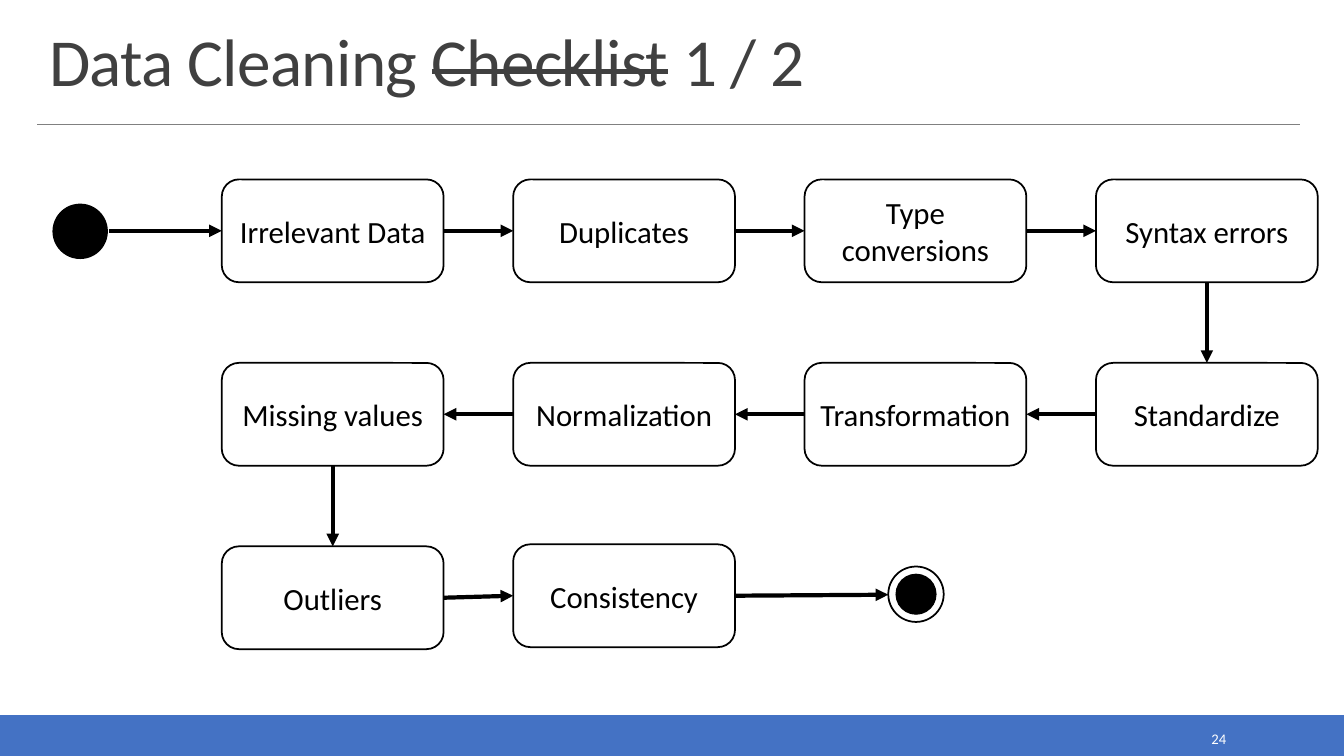
from lxml import etree
from pptx import Presentation
from pptx import util as u
from pptx.dml.color import RGBColor
from pptx.enum import shapes, text
from pptx.oxml.ns import qn

COLORS = {"bar": "4472C4", "rule": "808080", "title": "404040",
          "ink": "000000", "paper": "FFFFFF"}
SHAPE = shapes.MSO_SHAPE
MIDDLE = text.MSO_ANCHOR.MIDDLE
BOX_W, BOX_H = 2.2, 1.02
LEFT, STEP = 2.2, 2.89
TOP, MID, LOW = 1.78, 3.6, 5.42

prs = Presentation()
prs.slide_width, prs.slide_height = u.Inches(13.33), u.Inches(7.5)
s = prs.slides.add_slide(prs.slide_layouts[6])


def add_shape(kind, box, fill=None, line=None):
    sp = s.shapes.add_shape(kind, *map(u.Inches, box))
    sp.shadow.inherit = False
    if fill:
        sp.fill.solid()
        sp.fill.fore_color.rgb = RGBColor.from_string(COLORS[fill])
    else:
        sp.fill.background()
    if line:
        sp.line.color.rgb = RGBColor.from_string(COLORS[line])
        sp.line.width = u.Pt(1.25)
    else:
        sp.line.fill.background()
    return sp


def add_line(start, end, color, width):
    cx = s.shapes.add_connector(shapes.MSO_CONNECTOR.STRAIGHT,
                                *map(u.Inches, (*start, *end)))
    cx.line.color.rgb = RGBColor.from_string(COLORS[color])
    cx.line.width = u.Pt(width)
    etree.SubElement(cx._element.spPr, qn("a:effectLst"))
    return cx


add_shape(SHAPE.RECTANGLE, (0, 7.1, 13.33, 0.4), "bar", "bar")
add_line((0.37, 1.23), (12.89, 1.23), "rule", 0.5)

captions = [
    ((0.39, 0.2, 12.52, 0.84), text.MSO_ANCHOR.BOTTOM, text.PP_ALIGN.LEFT, 0.85,
     ["Data Cleaning ", "Checklist", " 1 / 2"], 48, "title"),
    ((10.83, 7.19, 1.43, 0.28), MIDDLE, text.PP_ALIGN.RIGHT, 1.0,
     ["24"], 10.5, "paper"),
]
for box, anchor, align, spacing, words, size, color in captions:
    tf = s.shapes.add_textbox(*map(u.Inches, box)).text_frame
    tf.word_wrap, tf.vertical_anchor = True, anchor
    p = tf.paragraphs[0]
    p.alignment, p.line_spacing = align, spacing
    for word in words:
        r = p.add_run()
        r.text = word
        for name, value in {"name": "Calibri", "size": u.Pt(size)}.items():
            setattr(r.font, name, value)
        r.font.color.rgb = RGBColor.from_string(COLORS[color])
        if color == "title":
            r._r.get_or_add_rPr().set("spc", "-50")
        if word == "Checklist":
            r._r.get_or_add_rPr().set("strike", "sngStrike")

add_shape(SHAPE.OVAL, (0.52, 2.02, 0.55, 0.55), "ink")
add_shape(SHAPE.OVAL, (8.89, 5.7, 0.39, 0.39), "ink", "ink")
add_shape(SHAPE.OVAL, (8.81, 5.62, 0.55, 0.55), None, "ink")

steps = [
    ("Irrelevant Data", 0, TOP), ("Duplicates", 1, TOP),
    ("Type conversions", 2, TOP), ("Syntax errors", 3, TOP),
    ("Standardize", 3, MID), ("Transformation", 2, MID),
    ("Normalization", 1, MID), ("Missing values", 0, MID),
    ("Outliers", 0, LOW), ("Consistency", 1, LOW - 0.02),
]
boxes = []
for label, col, top in steps:
    sp = add_shape(SHAPE.ROUNDED_RECTANGLE,
                   (LEFT + col * STEP, top, BOX_W, BOX_H), None, "ink")
    tf = sp.text_frame
    tf.word_wrap, tf.vertical_anchor = True, MIDDLE
    tf.margin_left = tf.margin_right = u.Inches(0.05)
    p = tf.paragraphs[0]
    p.alignment = text.PP_ALIGN.CENTER
    r = p.add_run()
    r.text = label
    for name, value in {"name": "Calibri", "size": u.Pt(22)}.items():
        setattr(r.font, name, value)
    r.font.color.rgb = RGBColor.from_string(COLORS["ink"])
    boxes.append(sp)

arrows = [add_line((1.08, 2.29), (LEFT, 2.29), "ink", 3)]
arrows[0].end_connect(boxes[0], 1)
for i in range(len(steps) - 1):
    col, next_col = steps[i][1], steps[i + 1][1]
    if col == next_col:
        sites = 2, 0
    elif col < next_col:
        sites = 3, 1
    else:
        sites = 1, 3
    cx = add_line((0, 0), (1, 1), "ink", 3)
    cx.begin_connect(boxes[i], sites[0])
    cx.end_connect(boxes[i + 1], sites[1])
    arrows.append(cx)
arrows.append(add_line((7.29, 5.91), (8.81, 5.9), "ink", 3))
arrows[-1].begin_connect(boxes[-1], 3)

for cx in arrows:
    etree.SubElement(cx.line._get_or_add_ln(), qn("a:tailEnd"), type="triangle")

prs.save("out.pptx")
